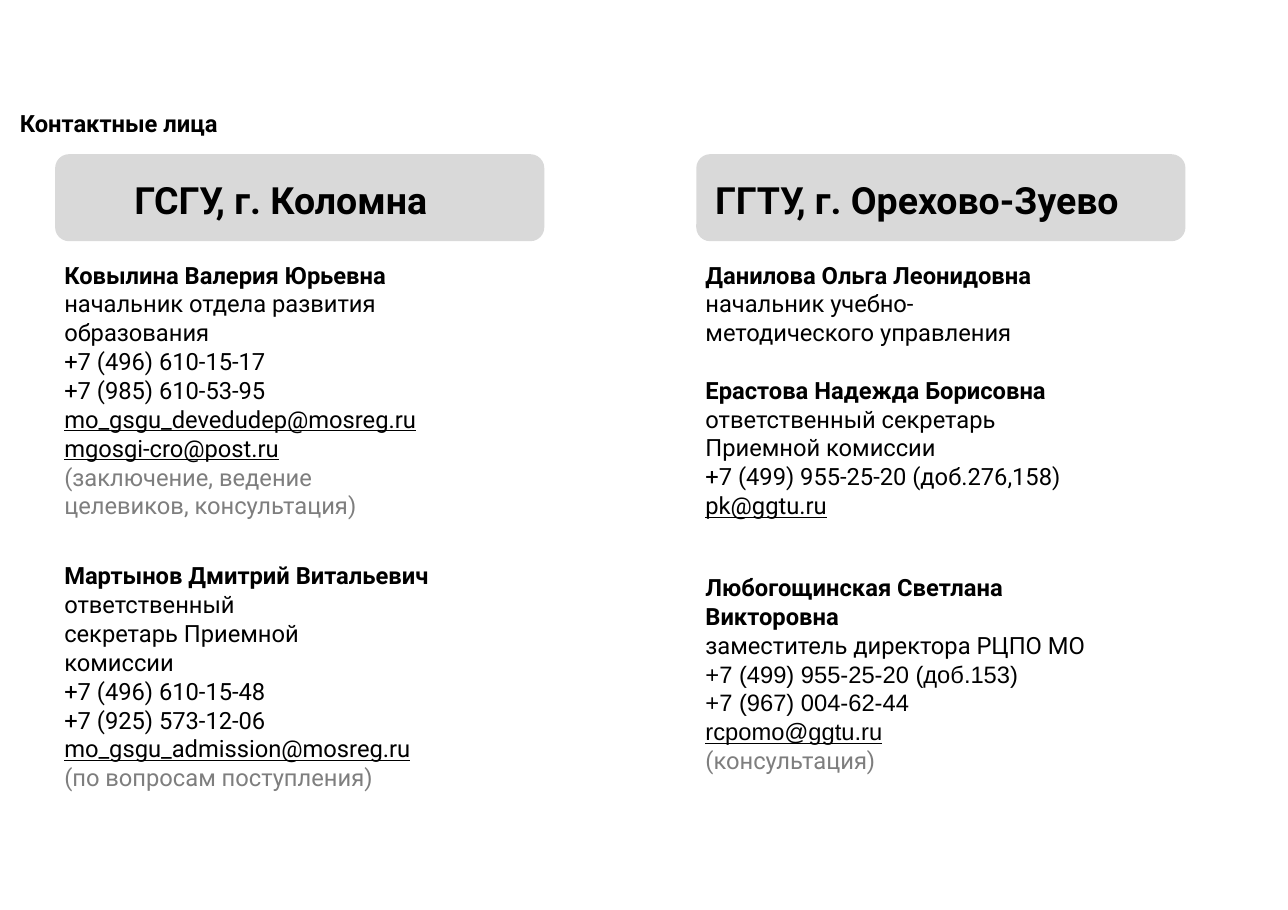
from lxml.etree import SubElement
from pptx import Presentation
from pptx.dml.color import RGBColor
from pptx.enum.shapes import MSO_SHAPE
from pptx.enum.text import MSO_ANCHOR, MSO_AUTO_SIZE, PP_ALIGN
from pptx.oxml.ns import qn
from pptx.util import Inches, Pt

WIDTH, HEIGHT = Inches(11.69), Inches(8.26)
COLUMN_LEFT, COLUMN_STEP, COLUMN_WIDTH = 4.28, 49.78, 37.98
COLORS = {"text": "000000", "note": "7E7E7E", "banner": "D9D9D9"}

STYLES = {
    "name": {"bold": True},
    "role": {},
    "phone": {},
    "mail": {"underline": True},
    "note": {"color": "note"},
    "arial phone": {"name": "Arial"},
    "arial mail": {"name": "Arial", "underline": True},
}

KOLOMNA = [
    (0, [
        ("name", "Ковылина Валерия Юрьевна"),
        ("role", "начальник отдела развития\vобразования"),
        ("phone", "+7 (496) 610-15-17"),
        ("phone", "+7 (985) 610-53-95"),
        ("mail", "mo_gsgu_devedudep@mosreg.ru"),
        ("mail", "mgosgi-cro@post.ru"),
        ("note", "(заключение, ведение\vцелевиков, консультация)"),
    ]),
    (26.9, [
        ("name", "Мартынов Дмитрий Витальевич"),
        ("role", "ответственный\vсекретарь Приемной\vкомиссии"),
        ("phone", "+7 (496) 610-15-48"),
        ("phone", "+7 (925) 573-12-06"),
        ("mail", "mo_gsgu_admission@mosreg.ru"),
        ("note", "(по вопросам поступления)"),
    ]),
]

OREKHOVO = [
    (0, [
        ("name", "Данилова Ольга Леонидовна"),
        ("role", "начальник учебно-\vметодического управления"),
    ]),
    (18.7, [
        ("name", "Ерастова Надежда Борисовна"),
        ("role", "ответственный секретарь\vПриемной комиссии"),
        ("phone", "+7 (499) 955-25-20 (доб.276,158)"),
        ("mail", "pk@ggtu.ru"),
    ]),
    (34.7, [
        ("name", "Любогощинская Светлана\vВикторовна"),
        ("role", "заместитель директора РЦПО МО"),
        ("arial phone", "+7 (499) 955-25-20 (доб.153)"),
        ("arial phone", "+7 (967) 004-62-44"),
        ("arial mail", "rcpomo@ggtu.ru"),
        ("note", "(консультация)"),
    ]),
]


def area(left, top, width, height):
    """Turn percentages of the slide into a left, top, width, height tuple."""
    return (int(WIDTH * left / 100), int(HEIGHT * top / 100),
            int(WIDTH * width / 100), int(HEIGHT * height / 100))


def place(shape, box):
    """Move a text shape to its box and give it plain margins."""
    shape.left, shape.top, shape.width, shape.height = box
    frame = shape.text_frame
    frame.word_wrap = True
    frame.auto_size = MSO_AUTO_SIZE.NONE
    frame.vertical_anchor = MSO_ANCHOR.TOP
    frame.margin_left = frame.margin_right = frame.margin_bottom = 0
    frame.margin_top = Inches(0.02)
    return frame


def write(paragraph, text, size, name="Roboto", bold=False, underline=False, color="text"):
    """Fill a paragraph with text in one font."""
    paragraph.text = text
    paragraph.alignment = PP_ALIGN.LEFT
    font = paragraph.font
    font.name, font.size = name, Pt(size)
    font.bold, font.underline = bold, underline
    font.color.rgb = RGBColor.from_string(COLORS[color])


def add_label(slide, box, text, size):
    """Add a bold one-line text box."""
    frame = place(slide.shapes.add_textbox(*box), box)
    write(frame.paragraphs[0], text, size, bold=True)


def add_banner(slide, left):
    """Add a rounded grey banner behind the column headings."""
    banner = slide.shapes.add_shape(
        MSO_SHAPE.ROUNDED_RECTANGLE, *area(left, 16.95, COLUMN_WIDTH, 9.56))
    banner.adjustments[0] = 0.16
    banner.shadow.inherit = False
    banner.fill.solid()
    banner.fill.fore_color.rgb = RGBColor.from_string(COLORS["banner"])
    banner.line.fill.background()
    slide.shapes.title.element.addprevious(banner.element)


def fill_contacts(placeholder, left, contacts):
    """List the contacts of one university, with a gap before each person."""
    frame = place(placeholder, area(left + 0.71, 28.33, COLUMN_WIDTH, 54))
    paragraph = frame.paragraphs[0]
    for gap, lines in contacts:
        for index, (style, text) in enumerate(lines):
            if paragraph is None:
                paragraph = frame.add_paragraph()
            write(paragraph, text, 15.5, **STYLES[style])
            paragraph.line_spacing = Pt(18.85)
            paragraph.space_before = Pt(0 if index else gap)
            properties = paragraph._p.get_or_add_pPr()
            properties.set("marL", "0")
            properties.set("indent", "0")
            bullet = SubElement(properties, qn("a:buNone"))
            properties.find(qn("a:defRPr")).addprevious(bullet)
            paragraph = None


def main():
    """Build the contacts slide and save it."""
    presentation = Presentation()
    presentation.slide_width, presentation.slide_height = WIDTH, HEIGHT
    slide = presentation.slides.add_slide(presentation.slide_layouts[3])
    right = COLUMN_LEFT + COLUMN_STEP

    add_label(slide, area(1.54, 11.72, 17.45, 3.5), "Контактные лица", 15.5)
    title = place(slide.shapes.title, area(COLUMN_LEFT + 6.16, 19.19, 25.92, 5.33))
    write(title.paragraphs[0], "ГСГУ, г. Коломна", 24.5, bold=True)
    add_label(slide, area(right + 1.46, 19.19, 35.33, 5.33), "ГГТУ, г. Орехово-Зуево", 24.5)

    columns = [(1, COLUMN_LEFT, KOLOMNA), (2, right, OREKHOVO)]
    for index, left, contacts in columns:
        add_banner(slide, left)
        fill_contacts(slide.placeholders[index], left, contacts)
    presentation.save("out.pptx")


if __name__ == "__main__":
    main()
